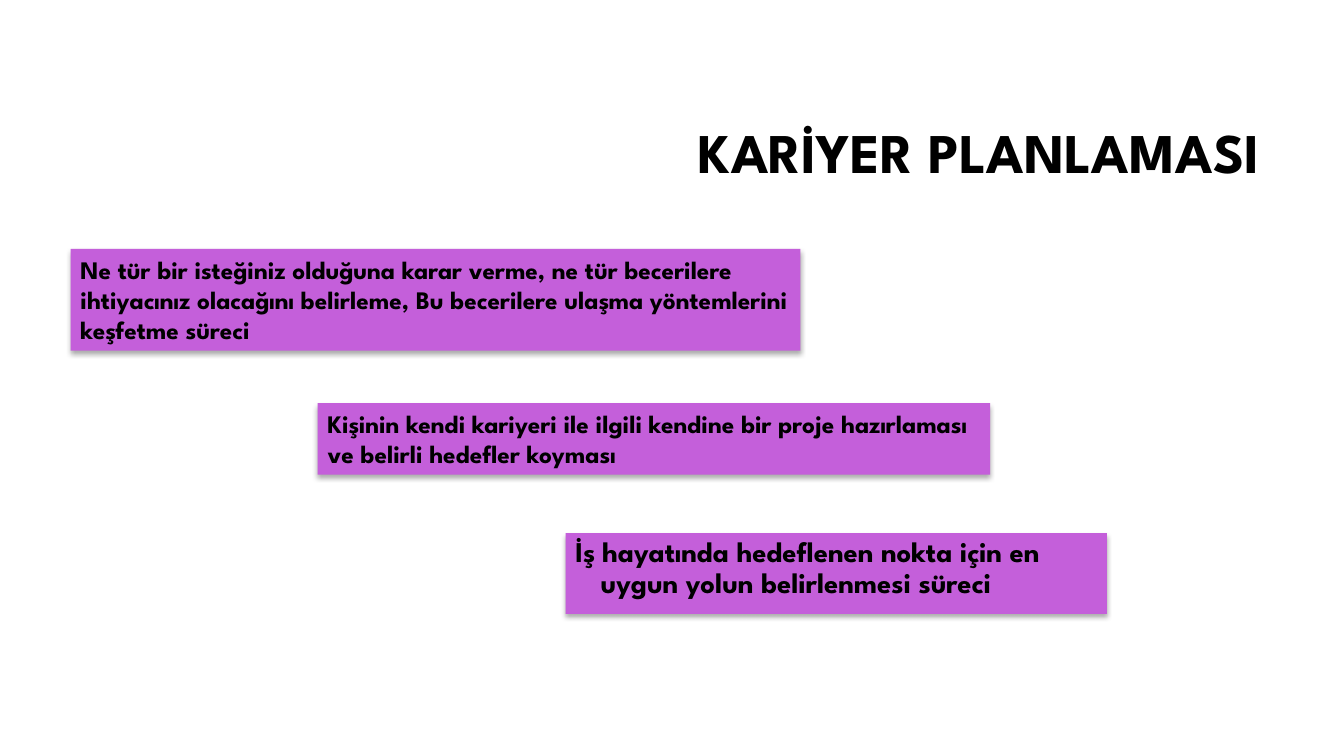
from lxml import etree
from pptx import Presentation, util as u
from pptx.dml.color import RGBColor
from pptx.enum import shapes, text
from pptx.oxml import ns

WIDE, HIGH = u.Inches(13.33), u.Inches(7.5)
FONT = "League Spartan"
HUES = {"ink": "000000", "card": "C45FDA", "page": "FFFFFF"}
STEPS = [
    ((5.25, 32.93, 54.31, 13.47),
     "Ne tür bir isteğiniz olduğuna karar verme, ne tür becerilere ihtiyacınız "
     "olacağını belirleme, Bu becerilere ulaşma yöntemlerini keşfetme süreci",
     {"grow": True}),
    ((23.63, 53.33, 50.04, 9.47),
     "Kişinin kendi kariyeri ile ilgili kendine bir proje hazırlaması "
     "ve belirli hedefler koyması",
     {"grow": True}),
    ((42.08, 70.53, 40.28, 10.67),
     "İş hayatında hedeflenen nokta için en uygun yolun belirlenmesi süreci",
     {"size": 20.4, "lead": 0.9, "hang": 0.25}),
]


def place(left, top, width, height):
    """Turn percentages of the slide into lengths."""
    return (int(WIDE * left / 100), int(HIGH * top / 100),
            int(WIDE * width / 100), int(HIGH * height / 100))


def hue(name):
    """Look up a colour by name."""
    return RGBColor.from_string(HUES[name])


def write(shape, words, size=18, lead=None, hang=0, grow=False,
          side=text.PP_ALIGN.LEFT, mid=text.MSO_ANCHOR.TOP):
    """Put one formatted paragraph into a shape."""
    frame = shape.text_frame
    frame.word_wrap = True
    frame.vertical_anchor = mid
    frame.auto_size = (text.MSO_AUTO_SIZE.SHAPE_TO_FIT_TEXT if grow
                       else text.MSO_AUTO_SIZE.NONE)
    para = frame.paragraphs[0]
    para.alignment = side
    if lead:
        para.line_spacing = lead
    if hang:
        props = para._p.get_or_add_pPr()
        props.set("marL", str(u.Inches(hang)))
        props.set("indent", str(-u.Inches(hang)))
    run = para.add_run()
    run.text = words
    font = run.font
    font.name, font.size, font.bold = FONT, u.Pt(size), True
    font.color.rgb = hue("ink")


def shade(shape):
    """Give a shape a soft shadow straight below it."""
    shape.shadow.inherit = False
    effects = shape._element.spPr.find(ns.qn("a:effectLst"))
    outer = etree.SubElement(
        effects, ns.qn("a:outerShdw"), blurRad=str(u.Pt(3.5)),
        dist=str(u.Pt(2.2)), dir="5400000", algn="ctr", rotWithShape="0")
    tint = etree.SubElement(outer, ns.qn("a:srgbClr"), val=HUES["ink"])
    etree.SubElement(tint, ns.qn("a:alpha"), val="32000")


def card(slide, area, words, **style):
    """Draw a filled card with its text."""
    box = slide.shapes.add_shape(shapes.MSO_SHAPE.RECTANGLE, *place(*area))
    box.fill.solid()
    box.fill.fore_color.rgb = hue("card")
    box.line.fill.background()
    shade(box)
    write(box, words, **style)


def title(slide, area, words):
    """Write the slide heading."""
    box = slide.shapes.add_textbox(*place(*area))
    write(box, words, size=40, lead=0.9, side=text.PP_ALIGN.RIGHT,
          mid=text.MSO_ANCHOR.MIDDLE)


def main():
    """Build and save the slide."""
    deck = Presentation()
    deck.slide_width, deck.slide_height = WIDE, HIGH
    slide = deck.slides.add_slide(deck.slide_layouts[6])
    slide.background.fill.solid()
    slide.background.fill.fore_color.rgb = hue("page")
    title(slide, (23.78, 11.2, 70.67, 18.8), "KARİYER PLANLAMASI")
    for area, words, style in STEPS:
        card(slide, area, words, **style)
    deck.save("out.pptx")


if __name__ == "__main__":
    main()
